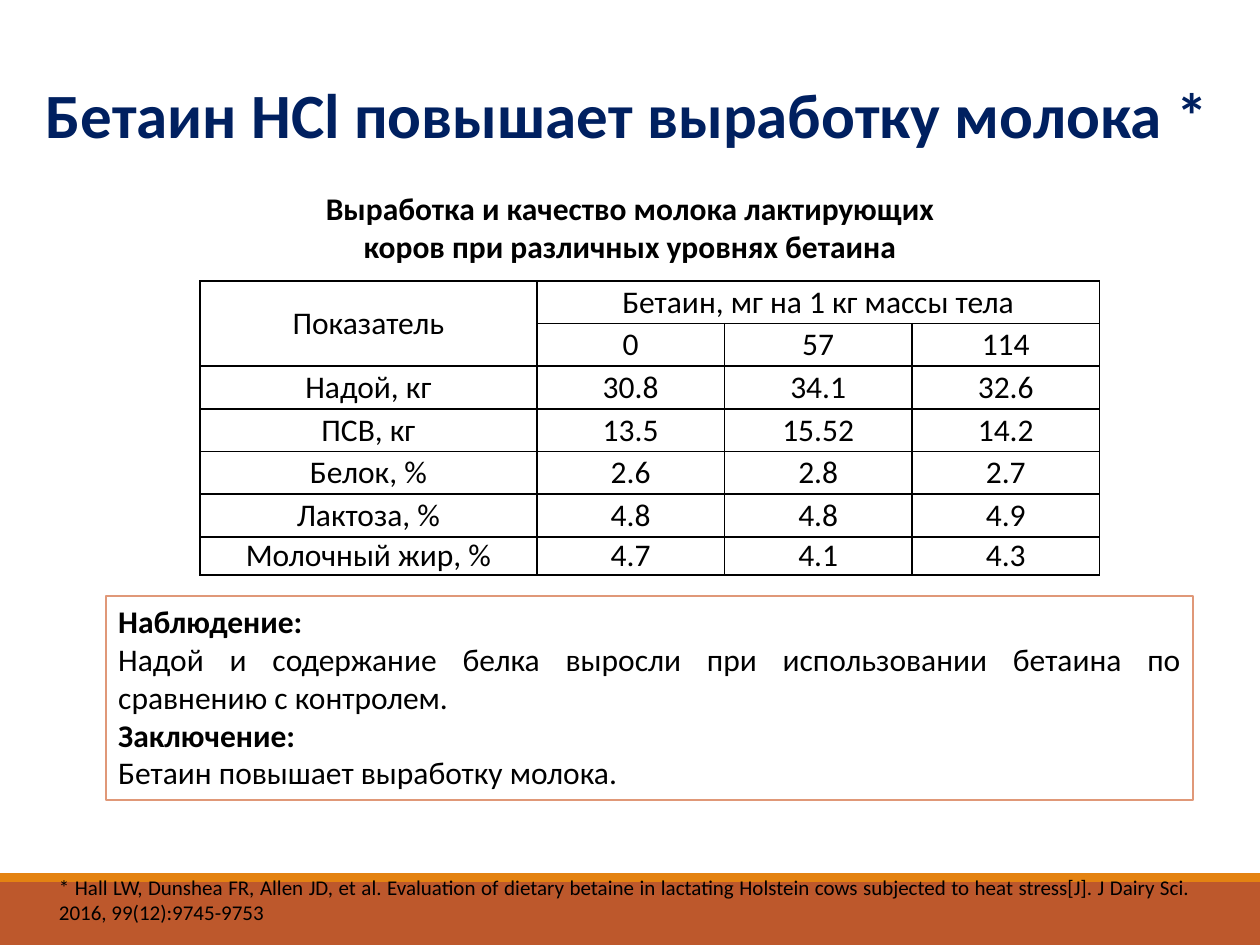
from dataclasses import dataclass

from lxml.etree import SubElement
from pptx import Presentation
from pptx.dml.color import RGBColor
from pptx.enum.shapes import MSO_SHAPE
from pptx.enum.text import MSO_ANCHOR, PP_ALIGN
from pptx.oxml import parse_xml
from pptx.oxml.ns import nsdecls, qn
from pptx.util import Pt


@dataclass(frozen=True)
class Theme:
    font: str = "Calibri"
    title_size: int = 36
    body_size: int = 18
    note_size: int = 12
    ink: str = "000000"
    title: str = "002060"
    paper: str = "FFFFFF"
    frame: str = "E09878"
    footer: str = "BD582C"
    footer_edge: str = "E48312"


class SlideBuilder:
    def __init__(self, slide, theme):
        self.slide = slide
        self.theme = theme

    def add_text(self, paragraph, text, size, align, bold=False, color=None):
        paragraph.alignment = align
        run = paragraph.add_run()
        run.text = text
        style = {"name": self.theme.font, "size": Pt(size), "bold": bold}
        for attribute, value in style.items():
            setattr(run.font, attribute, value)
        run.font.color.rgb = RGBColor.from_string(color or self.theme.ink)

    def text(self, bounds, text, size, align, **style):
        box = self.slide.shapes.add_textbox(*map(Pt, bounds))
        box.text_frame.word_wrap = True
        self.add_text(box.text_frame.paragraphs[0], text, size, align, **style)

    def rectangle(self, bounds, fill, line=None):
        shape = self.slide.shapes.add_shape(MSO_SHAPE.RECTANGLE, *map(Pt, bounds))
        shape.shadow.inherit = False
        shape.fill.solid()
        shape.fill.fore_color.rgb = RGBColor.from_string(fill)
        if line:
            shape.line.color.rgb = RGBColor.from_string(line)
            shape.line.width = Pt(1.25)
        else:
            shape.line.fill.background()
        return shape

    def panel(self, bounds, sections):
        frame = self.rectangle(bounds, self.theme.paper, self.theme.frame).text_frame
        frame.word_wrap = True
        frame.vertical_anchor = MSO_ANCHOR.TOP
        lines = [(text, index == 0) for section in sections for index, text in enumerate(section)]
        for index, (text, bold) in enumerate(lines):
            paragraph = frame.add_paragraph() if index else frame.paragraphs[0]
            self.add_text(paragraph, text, self.theme.body_size, PP_ALIGN.JUSTIFY, bold)

    def border(self, cell):
        properties = cell._tc.get_or_add_tcPr()
        for index, side in enumerate(("lnL", "lnR", "lnT", "lnB")):
            line = parse_xml(f'<a:{side} {nsdecls("a")} w="{Pt(1)}"/>')
            fill = SubElement(line, qn("a:solidFill"))
            SubElement(fill, qn("a:srgbClr"), val=self.theme.ink)
            properties.insert(index, line)

    def table(self, bounds, widths, heights, rows, merges):
        table = self.slide.shapes.add_table(len(rows), len(widths), *map(Pt, bounds)).table
        for column, width in zip(table.columns, widths):
            column.width = Pt(width)
        for row, height in zip(table.rows, heights):
            row.height = Pt(height)
        layout = {"vertical_anchor": MSO_ANCHOR.MIDDLE, "margin_left": 0,
                  "margin_right": 0, "margin_top": 0, "margin_bottom": 0}
        for row, texts in zip(table.rows, rows):
            for cell, text in zip(row.cells, texts):
                for attribute, value in layout.items():
                    setattr(cell, attribute, value)
                cell.fill.background()
                self.border(cell)
                self.add_text(cell.text_frame.paragraphs[0], text,
                              self.theme.body_size, PP_ALIGN.CENTER)
        for first, last in merges:
            table.cell(*first).merge(table.cell(*last))


def main():
    presentation = Presentation()
    presentation.slide_width, presentation.slide_height = Pt(720), Pt(540)
    theme = Theme()
    builder = SlideBuilder(presentation.slides.add_slide(presentation.slide_layouts[6]), theme)

    builder.rectangle((0, 504, 720, 36), theme.footer)
    builder.rectangle((0, 499, 720, 5), theme.footer_edge)
    builder.text((17.3, 39.6, 680.4, 51), "Бетаин HCl повышает выработку молока *",
                 theme.title_size, PP_ALIGN.RIGHT, bold=True, color=theme.title)
    builder.text((26.6, 496.1, 661, 36),
                 "* Hall LW, Dunshea FR, Allen JD, et al. Evaluation of dietary betaine in "
                 "lactating Holstein cows subjected to heat stress[J]. J Dairy Sci. "
                 "2016, 99(12):9745-9753", theme.note_size, PP_ALIGN.JUSTIFY)
    builder.text((155.5, 104.4, 409, 51),
                 "Выработка и качество молока лактирующих коров при различных уровнях бетаина",
                 theme.body_size, PP_ALIGN.CENTER, bold=True)

    rows = [
        ("Показатель", "Бетаин, мг на 1 кг массы тела", "", ""),
        ("", "0", "57", "114"),
        ("Надой, кг", "30.8", "34.1", "32.6"),
        ("ПСВ, кг", "13.5", "15.52", "14.2"),
        ("Белок, %", "2.6", "2.8", "2.7"),
        ("Лактоза, %", "4.8", "4.8", "4.9"),
        ("Молочный жир, %", "4.7", "4.1", "4.3"),
    ]
    builder.table((114.3, 160.5, 514, 168.5), [192.5] + [107.2] * 3,
                  [24.4] * 6 + [21.9], rows,
                  [((0, 0), (1, 0)), ((0, 1), (0, 3))])

    builder.panel((60.5, 340.6, 621.4, 116.4), [
        ("Наблюдение:", "Надой и содержание белка выросли при использовании бетаина "
                        "по сравнению с контролем."),
        ("Заключение:", "Бетаин повышает выработку молока."),
    ])
    presentation.save("out.pptx")


if __name__ == "__main__":
    main()
